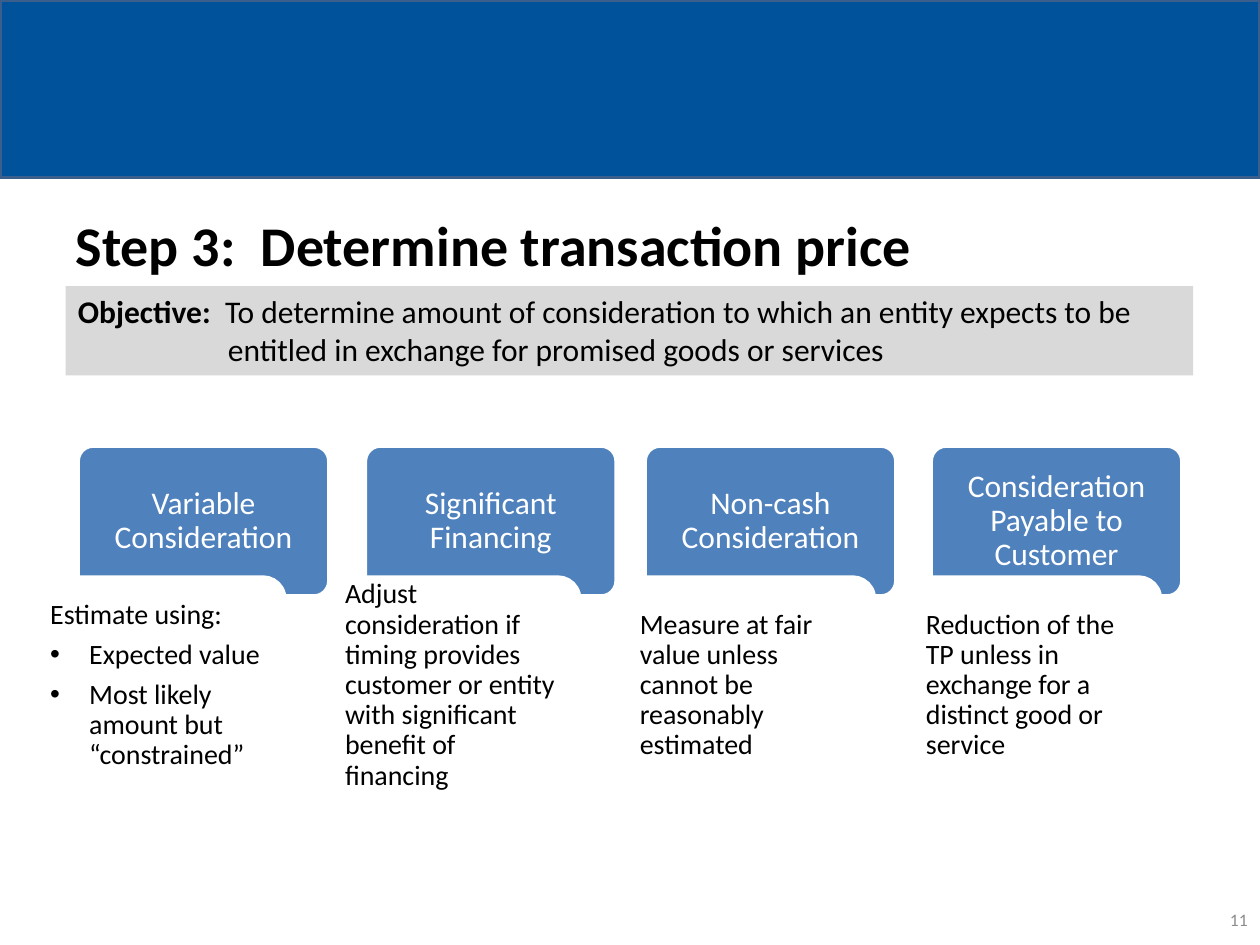
from lxml.etree import SubElement
from pptx import Presentation
from pptx.dml.color import RGBColor
from pptx.enum.shapes import MSO_SHAPE as Shape
from pptx.enum.text import MSO_ANCHOR as Anchor, PP_ALIGN as Align
from pptx.oxml.ns import qn
from pptx.util import Inches, Pt

TITLE = "Step 3:  Determine transaction price"
OBJECTIVE = (
    "Objective:  ",
    "To determine amount of consideration to which an entity expects to be "
    "entitled in exchange for promised goods or services",
)
TOPICS = [
    (0.62, 0.25, "Variable Consideration",
     ["Estimate using:", "• Expected value", "• Most likely amount but “constrained”"]),
    (2.9, 2.59, "Significant Financing",
     ["Adjust consideration if timing provides customer or entity "
      "with significant benefit of financing"]),
    (5.12, 4.93, "Non-cash Consideration",
     ["Measure at fair value unless cannot be reasonably estimated"]),
    (7.39, 7.2, "Consideration Payable to Customer",
     ["Reduction of the TP unless in exchange for a distinct good or service"]),
]
HEADING_TOP, HEADING_SIZE = 3.54, (1.99, 1.19)
DETAIL_TOP, DETAIL_SIZE = 4.58, (2.01, 1.72)
BLUE, WHITE, BLACK = "4F81BD", "FFFFFF", "000000"


def color(value):
    return RGBColor.from_string(value)


def style(para, size, value, align=Align.LEFT):
    para.alignment = align
    for span in para.runs:
        span.font.name, span.font.size = "Calibri", Pt(size)
        span.font.color.rgb = color(value)


def indent(para, left, bullet=None):
    props = para._p.get_or_add_pPr()
    props.set("marL", str(Inches(left)))
    props.set("indent", str(-Inches(left)))
    if bullet:
        SubElement(props, qn("a:buFont"), typeface="Arial")
        SubElement(props, qn("a:buChar"), char=bullet)


def add_block(page, kind, place, fill, line=None):
    block = page.shapes.add_shape(kind, *map(Inches, place))
    block.shadow.inherit = False
    block.fill.solid()
    block.fill.fore_color.rgb = color(fill)
    if line:
        block.line.color.rgb = color(line)
        block.line.width = Pt(2)
    else:
        block.line.fill.background()
    return block


def add_card(page, place, fill, lines, size, value, align):
    card = add_block(page, Shape.ROUNDED_RECTANGLE, place, fill, WHITE)
    card.adjustments[0] = 0.1
    frame = card.text_frame
    frame.word_wrap = True
    frame.vertical_anchor = Anchor.MIDDLE
    frame.margin_left = frame.margin_right = Inches(0.1)
    frame.margin_top = frame.margin_bottom = Inches(0.12)
    frame.text = "\n".join(line.removeprefix("• ") for line in lines)
    for para, line in zip(frame.paragraphs, lines):
        para.line_spacing = 0.9
        para.space_after = Pt(size * 0.35)
        if line.startswith("•"):
            indent(para, 0.31, "•")
        style(para, size, value, align)


def main():
    """Build the transaction price slide."""
    deck = Presentation()
    deck.slide_width, deck.slide_height = Inches(10), Inches(7.5)
    page = deck.slides.add_slide(deck.slide_layouts[5])

    add_block(page, Shape.RECTANGLE, (0, 0, 10, 1.41), "00539B", "3A5F8C")

    title = page.shapes.title
    title.left, title.top, title.width, title.height = map(Inches, (0.5, 1.58, 9, 0.72))
    title.text_frame.text = TITLE
    title.text_frame.vertical_anchor = Anchor.MIDDLE
    heading = title.text_frame.paragraphs[0]
    style(heading, 32, BLACK)
    heading.runs[0].font.bold = True

    objective = add_block(page, Shape.RECTANGLE, (0.52, 2.27, 8.95, 0.71), "D9D9D9")
    objective.text_frame.word_wrap = True
    objective.text_frame.vertical_anchor = Anchor.TOP
    para = objective.text_frame.paragraphs[0]
    for text in OBJECTIVE:
        para.add_run().text = text
    indent(para, 1.19)
    style(para, 18, BLACK)
    para.runs[0].font.bold = True

    for left, _, name, _ in TOPICS:
        add_card(page, (left, HEADING_TOP, *HEADING_SIZE), BLUE, [name], 18, WHITE, Align.CENTER)
    for _, left, _, lines in TOPICS:
        add_card(page, (left, DETAIL_TOP, *DETAIL_SIZE), WHITE, lines, 16, BLACK, Align.LEFT)

    number = page.shapes.add_textbox(*map(Inches, (7.67, 7.1, 2.33, 0.4)))
    number.text_frame.word_wrap = True
    number.text_frame.vertical_anchor = Anchor.MIDDLE
    number.text_frame.text = "11"
    style(number.text_frame.paragraphs[0], 10, "8C8C8C", Align.RIGHT)

    deck.save("out.pptx")


if __name__ == "__main__":
    main()
